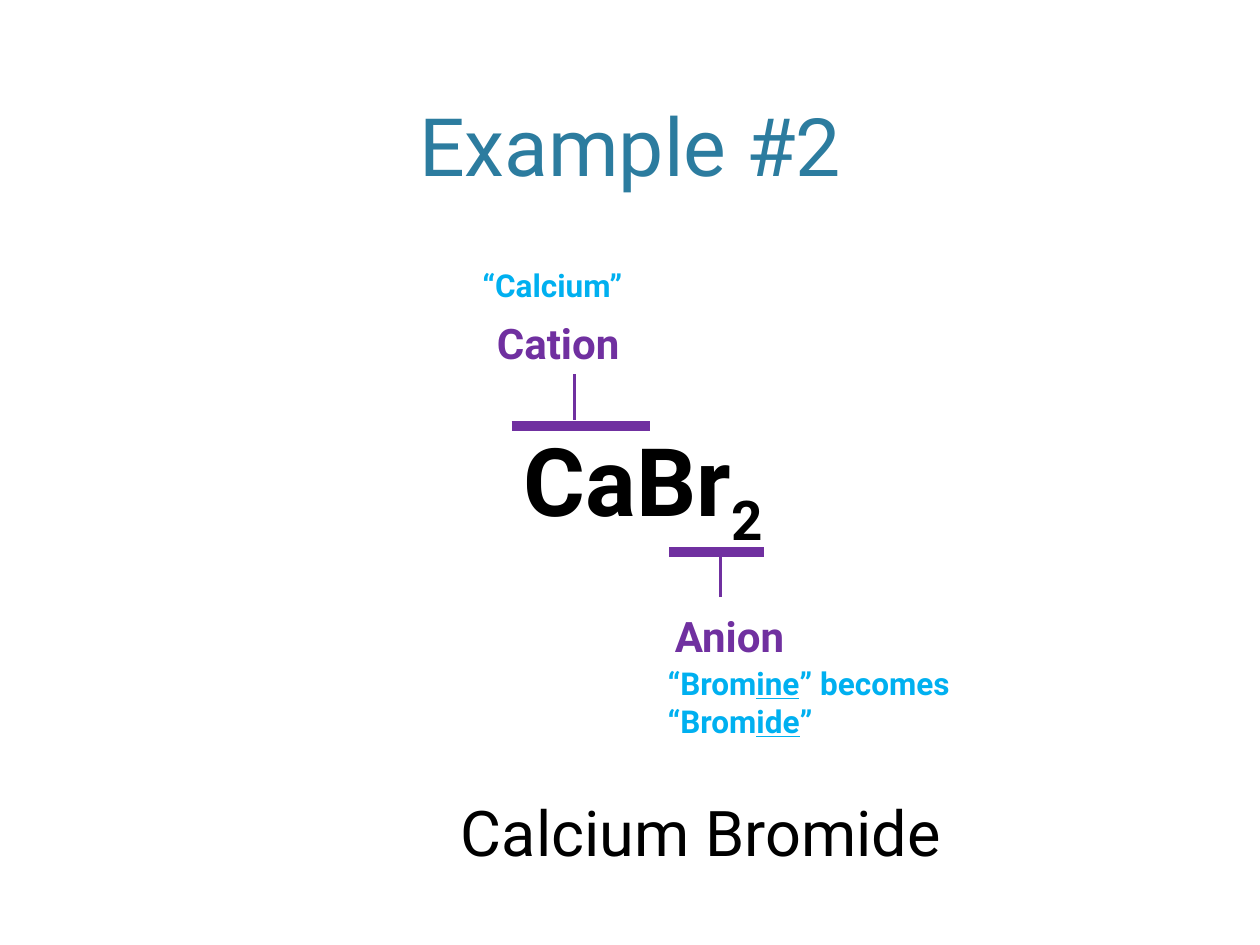
"""Build a slide that names calcium bromide from its cation and anion."""
from lxml.etree import SubElement
from pptx import Presentation
from pptx.dml.color import RGBColor
from pptx.enum.shapes import MSO_CONNECTOR
from pptx.enum.text import MSO_ANCHOR, MSO_AUTO_SIZE, PP_ALIGN
from pptx.oxml.ns import qn
from pptx.util import Inches, Pt

TEAL = RGBColor(0x2C, 0x7C, 0x9F)
PURPLE = RGBColor(0x70, 0x30, 0xA0)
SKY = RGBColor(0x00, 0xB0, 0xF0)
BLACK = RGBColor(0x00, 0x00, 0x00)
FONT = "Roboto"


class NamingSlide:
    def __init__(self, slide):
        self.slide = slide

    def add_run(self, paragraph, text, size, color, bold=False):
        run = paragraph.add_run()
        run.text = text
        run.font.name = FONT
        run.font.size = Pt(size)
        run.font.color.rgb = color
        run.font.bold = bold
        return run

    def title(self, text, box):
        heading = self.slide.shapes.title
        heading.left, heading.top, heading.width, heading.height = map(Inches, box)
        frame = heading.text_frame
        frame.vertical_anchor = MSO_ANCHOR.BOTTOM
        frame.paragraphs[0].alignment = PP_ALIGN.CENTER
        self.add_run(frame.paragraphs[0], text, 46, TEAL)

    def text(self, pieces, box, size, color, bold=True, wrap=False, align=PP_ALIGN.LEFT):
        frame = self.slide.shapes.add_textbox(*map(Inches, box)).text_frame
        frame.word_wrap = wrap
        frame.auto_size = MSO_AUTO_SIZE.SHAPE_TO_FIT_TEXT
        frame.paragraphs[0].alignment = align
        return [self.add_run(frame.paragraphs[0], piece, size, color, bold) for piece in pieces]

    def line(self, start, end, weight):
        connector = self.slide.shapes.add_connector(
            MSO_CONNECTOR.STRAIGHT, *map(Inches, (*start, *end)))
        connector.line.color.rgb = PURPLE
        connector.line.width = Pt(weight)
        SubElement(connector._element.spPr, qn("a:effectLst"))

    def ion(self, name, label_box, bar, stem):
        left, right, bar_y = bar
        stem_x, stem_start, stem_end = stem
        self.line((left, bar_y), (right, bar_y), 6)
        self.line((stem_x, stem_start), (stem_x, stem_end), 2)
        self.text([name], label_box, 24, PURPLE, align=PP_ALIGN.CENTER)


def main():
    presentation = Presentation()
    presentation.slide_width, presentation.slide_height = Inches(10), Inches(7.5)
    naming = NamingSlide(presentation.slides.add_slide(presentation.slide_layouts[5]))

    naming.title("Example #2", (0.6, 0.12, 8.8, 1.46))
    naming.ion("Cation", (3.81, 2.47, 1.24, 0.5), (4.06, 5.16, 3.38), (4.56, 3.33, 2.97))
    naming.ion("Anion", (5.22, 4.8, 1.14, 0.5), (5.31, 6.06, 4.38), (5.72, 4.74, 4.38))

    naming.text(["“Calcium”"], (3.73, 2.06, 2.05, 0.4), 18, SKY, wrap=True)
    endings = naming.text(["“Brom", "ine", "” becomes “Brom", "ide", "”"],
                          (5.2, 5.22, 3, 0.7), 18, SKY, wrap=True)
    for ending in endings[1::2]:
        ending.font.underline = True

    symbols, subscript = naming.text(["CaBr", "2"], (4.06, 3.3, 2.27, 1), 54, BLACK)
    subscript.font._element.set("baseline", "-25000")
    naming.text(["Calcium Bromide"], (3.56, 6.25, 4.01, 0.7), 36, BLACK, bold=False)

    presentation.save("out.pptx")


if __name__ == "__main__":
    main()
